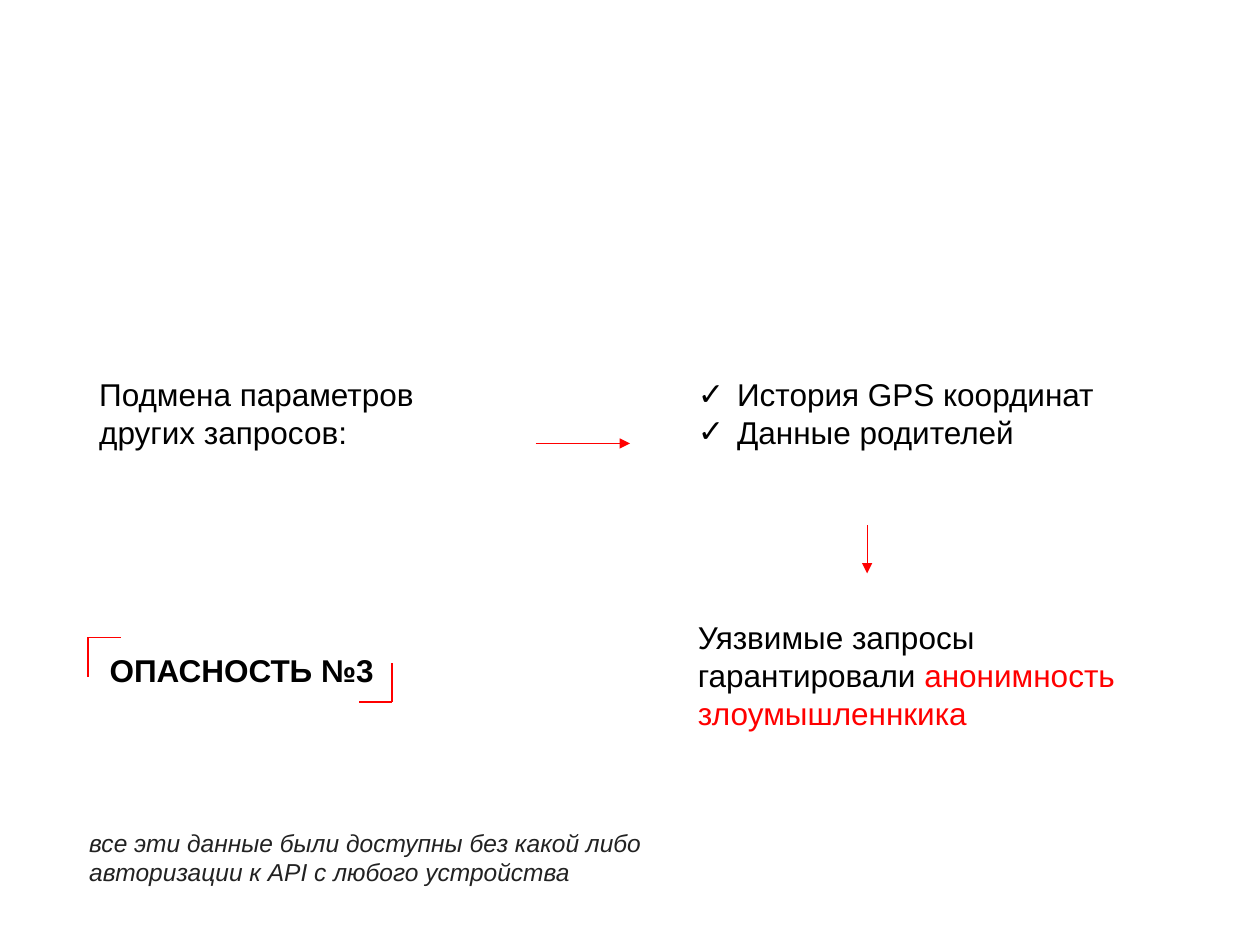
from dataclasses import dataclass

from lxml import etree
from pptx import Presentation
from pptx import util as u
from pptx.dml.color import RGBColor
from pptx.enum import shapes, text
from pptx.oxml import ns


@dataclass(frozen=True)
class Theme:
    font: str = "Arial"
    ink: str = "000000"
    accent: str = "FF0000"
    muted: str = "222222"
    body: int = 18
    note: int = 14
    thin: float = 0.5
    bracket: float = 1


THEME = Theme()


def add_text(page, box, paragraphs, size=THEME.body, bullet=None, **style):
    shape = page.shapes.add_textbox(*map(u.Cm, box))
    frame = shape.text_frame
    frame.word_wrap = True
    frame.auto_size = text.MSO_AUTO_SIZE.SHAPE_TO_FIT_TEXT
    formats = {"name": THEME.font, "size": u.Pt(size), **style}
    for index, spans in enumerate(paragraphs):
        para = frame.paragraphs[0] if index == 0 else frame.add_paragraph()
        if bullet:
            add_bullet(para, bullet)
        for wording, color in spans:
            span = para.add_run()
            span.text = wording
            for name, value in formats.items():
                setattr(span.font, name, value)
            span.font.color.rgb = RGBColor.from_string(color)


def add_bullet(para, mark):
    properties = para._p.get_or_add_pPr()
    indent = u.Cm(0.79)
    properties.set("marL", str(indent))
    properties.set("indent", str(-indent))
    etree.SubElement(properties, ns.qn("a:buFont"), typeface=THEME.font)
    etree.SubElement(properties, ns.qn("a:buChar"), char=mark)


def add_line(parent, start, end, width, arrow=False):
    line = parent.add_connector(
        shapes.MSO_CONNECTOR.STRAIGHT, *map(u.Cm, (*start, *end))
    )
    line.line.color.rgb = RGBColor.from_string(THEME.accent)
    line.line.width = u.Pt(width)
    if arrow:
        etree.SubElement(line.line._get_or_add_ln(), ns.qn("a:tailEnd"), type="triangle")
    etree.SubElement(line._element.spPr, ns.qn("a:effectLst"))


def add_corner(page, corner, reach_x, reach_y):
    x, y = corner
    group = page.shapes.add_group_shape()
    for end in ((x, y + reach_y), (x + reach_x, y)):
        add_line(group.shapes, corner, end, THEME.bracket)


def add_attack_flow(page, box):
    left, top, width, height = box
    column = 10.16
    right = left + width - column
    add_text(page, (left, top, 8.81, 1.8),
             [[("Подмена параметров других запросов:", THEME.ink)]])
    add_text(page, (right, top, column, 2.57),
             [[("История GPS координат", THEME.ink)],
              [("Данные родителей", THEME.ink)]], bullet="✓")
    add_text(page, (right, top + height - 2.57, column, 2.57),
             [[("Уязвимые запросы гарантировали ", THEME.ink),
               ("анонимность злоумышленнкика", THEME.accent)]])
    add_line(page.shapes, (right + 3.66, top + 3.15), (right + 3.66, top + 4.12),
             THEME.thin, arrow=True)
    add_line(page.shapes, (left + 9.05, top + 1.5), (left + 10.95, top + 1.5),
             THEME.thin, arrow=True)


def add_danger_label(page, box):
    left, top, width, height = box
    add_text(page, (left + 0.18, top + 0.15, 10.16, 1.02),
             [[("ОПАСНОСТЬ №3", THEME.ink)]], bold=True)
    reach_x, reach_y = 0.66, 0.79
    add_corner(page, (left, top), reach_x, reach_y)
    add_corner(page, (left + width, top + height), -reach_x, -reach_y)


def add_footnote(page, box):
    add_text(page, box,
             [[("все эти данные были доступны без какой либо авторизации "
                "к API с любого устройства", THEME.muted)]],
             size=THEME.note, italic=True)


def main():
    deck = Presentation()
    deck.slide_width, deck.slide_height = u.Cm(25.4), u.Cm(19.05)
    page = deck.slides.add_slide(deck.slide_layouts[6])
    add_attack_flow(page, (1.75, 7.44, 22.23, 7.47))
    add_danger_label(page, (1.78, 12.85, 6.12, 1.3))
    add_footnote(page, (1.55, 16.56, 12.7, 1.45))
    deck.save("out.pptx")


if __name__ == "__main__":
    main()
